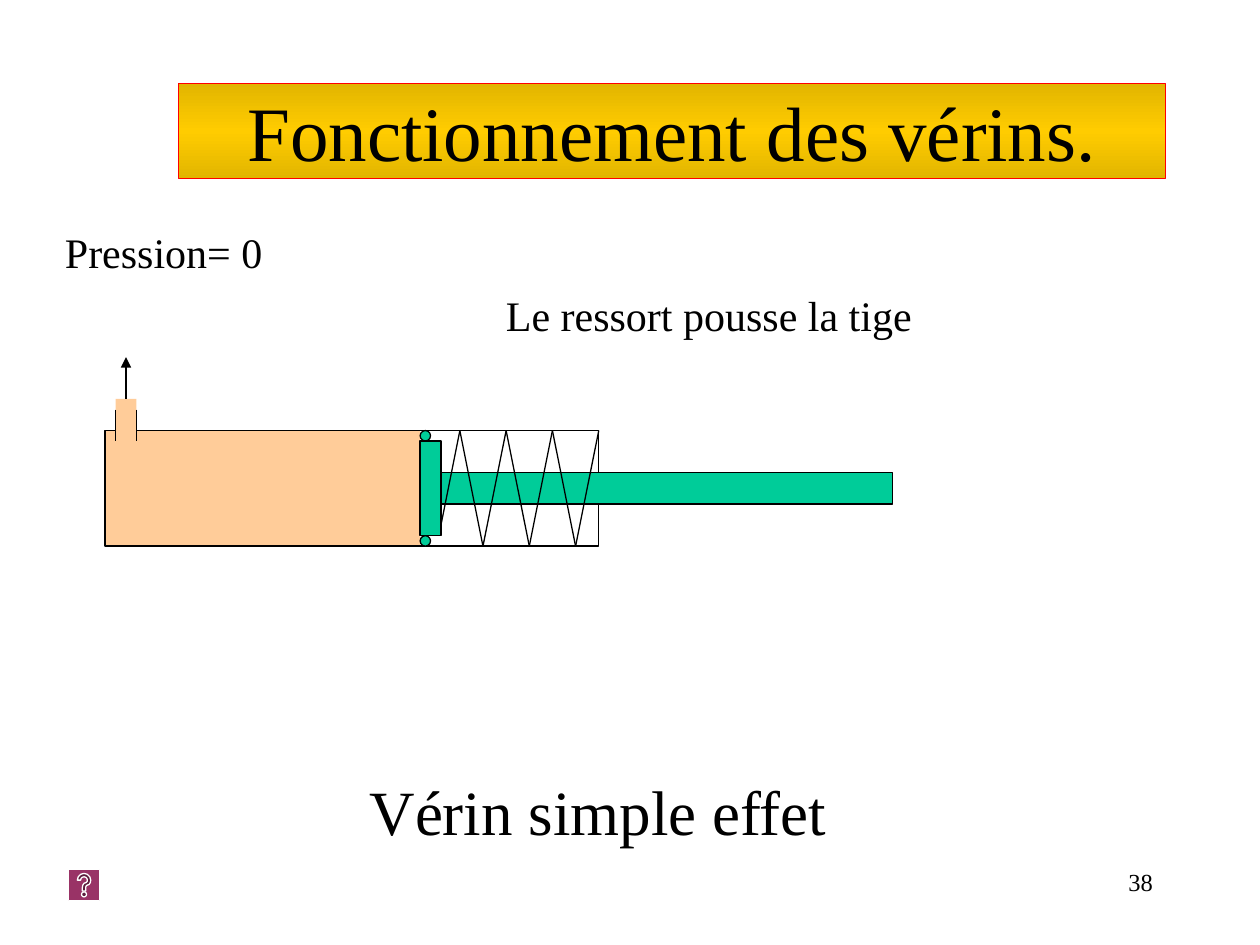
from copy import deepcopy
from dataclasses import dataclass
from itertools import pairwise

from lxml import etree
from pptx import Presentation
from pptx.dml.color import RGBColor
from pptx.enum.shapes import MSO_CONNECTOR, MSO_SHAPE
from pptx.enum.text import MSO_ANCHOR, PP_ALIGN
from pptx.oxml.ns import qn
from pptx.util import Cm, Pt

RECTANGLE = MSO_SHAPE.RECTANGLE
OVAL = MSO_SHAPE.OVAL
HELP_BUTTON = MSO_SHAPE.ACTION_BUTTON_HELP
STRAIGHT = MSO_CONNECTOR.STRAIGHT
LEFT, CENTER, RIGHT = PP_ALIGN.LEFT, PP_ALIGN.CENTER, PP_ALIGN.RIGHT
MIDDLE = MSO_ANCHOR.MIDDLE


@dataclass(frozen=True)
class Theme:
    font: str = "Times New Roman"
    black: str = "000000"
    white: str = "FFFFFF"
    red: str = "FF0000"
    gold: str = "FFCC00"
    dark_gold: str = "E2B500"
    chamber: str = "FFCC99"
    piston: str = "00CC99"
    button: str = "993366"
    title_size: int = 44
    caption_size: int = 36
    label_size: int = 24
    number_size: int = 14
    line_width: float = 0.75


THEME = Theme()


def color(value):
    return RGBColor.from_string(value)


def set_line(line, value):
    line.color.rgb = color(value)
    line.width = Pt(THEME.line_width)


def write(shape, text, size, alignment=LEFT):
    shape.text_frame.word_wrap = True
    paragraph = shape.text_frame.paragraphs[0]
    paragraph.text = text
    paragraph.alignment = alignment
    paragraph.font.name = THEME.font
    paragraph.font.size = Pt(size)
    paragraph.font.color.rgb = color(THEME.black)


def add_text(slide, box, text, size, alignment=LEFT):
    shape = slide.shapes.add_textbox(*map(Cm, box))
    write(shape, text, size, alignment)


def add_shape(shapes, kind, box, fill=None, line=None):
    shape = shapes.add_shape(kind, *map(Cm, box))
    shape.shadow.inherit = False
    if fill:
        shape.fill.solid()
        shape.fill.fore_color.rgb = color(fill)
    else:
        shape.fill.background()
    if line:
        set_line(shape.line, line)
    else:
        shape.line.fill.background()
    return shape


def add_line(shapes, start, end, value=THEME.black, arrow=False):
    connector = shapes.add_connector(STRAIGHT, *map(Cm, (*start, *end)))
    set_line(connector.line, value)
    properties = connector._element.spPr
    if arrow:
        outline = properties.find(qn("a:ln"))
        etree.SubElement(outline, qn("a:tailEnd"), type="triangle")
    etree.SubElement(properties, qn("a:effectLst"))


def add_title(slide, box, text):
    shape = add_shape(slide.shapes, RECTANGLE, box, line=THEME.red)
    shape.fill.gradient()
    shape.fill.gradient_angle = 270
    # A third stop makes the gradient run dark, bright, dark
    stops = shape._element.spPr.find(qn("a:gradFill")).find(qn("a:gsLst"))
    stops.insert(1, deepcopy(stops[0]))
    shades = (THEME.dark_gold, THEME.gold, THEME.dark_gold)
    for stop, shade, position in zip(shape.fill.gradient_stops, shades, (0, 0.5, 1)):
        stop.color.rgb = color(shade)
        stop.position = position
    shape.text_frame.vertical_anchor = MIDDLE
    write(shape, text, THEME.title_size, CENTER)


def add_cylinder(slide):
    shapes = slide.shapes.add_group_shape().shapes
    left, right, top, bottom = 2.12, 12.07, 8.68, 11.01
    piston_left, piston_right = 8.47, 8.89
    port_left, port_right = 2.33, 2.75
    body = (left, top, right - left, bottom - top)

    # Body, pressure chamber and port
    add_shape(shapes, RECTANGLE, body, THEME.white)
    add_shape(shapes, RECTANGLE, (left, top, piston_left - left, bottom - top), THEME.chamber)
    add_shape(shapes, RECTANGLE, (port_left, 8.04, port_right - port_left, 0.85), THEME.chamber)
    for x in (port_left, port_right):
        add_line(shapes, (x, 8.26), (x, 8.89))
    add_shape(shapes, RECTANGLE, body, line=THEME.black)
    add_line(shapes, (port_left, top), (port_right, top), THEME.chamber)

    # Rod, piston and seals
    add_shape(shapes, RECTANGLE, (piston_right, 9.53, 9.1, 0.63), THEME.piston, THEME.black)
    add_shape(shapes, RECTANGLE, (piston_left, 8.89, piston_right - piston_left, 1.91),
              THEME.piston, THEME.black)
    seal = 0.21
    for y in (top, bottom - seal):
        add_shape(shapes, OVAL, (piston_left, y, seal, seal), THEME.piston, THEME.black)

    # Spring: a zigzag between the walls, ending at the right end of the body
    first_peak, strokes = 9.27, 6
    step = (right - first_peak) / strokes
    spring = [(piston_right, 10.58)]
    spring += [(first_peak + i * step, bottom if i % 2 else top) for i in range(strokes + 1)]
    for start, end in pairwise(spring):
        add_line(shapes, start, end)

    # Exhaust arrow
    port_center = (port_left + port_right) / 2
    add_line(shapes, (port_center, 8.04), (port_center, 7.2), arrow=True)


def main():
    presentation = Presentation()
    presentation.slide_width, presentation.slide_height = Cm(25.4), Cm(19.05)
    slide = presentation.slides.add_slide(presentation.slide_layouts[6])

    # Heading and labels
    add_text(slide, (18.2, 17.36, 5.29, 1.27), "38", THEME.number_size, RIGHT)
    add_title(slide, (3.6, 1.69, 19.9, 1.91), "Fonctionnement des vérins.")
    add_text(slide, (9.95, 5.72, 9.74, 1.27), "Le ressort pousse la tige", THEME.label_size)
    add_text(slide, (1.06, 4.45, 5.29, 1.27), "Pression= 0", THEME.label_size)

    # Drawing, caption and help button
    add_cylinder(slide)
    add_text(slide, (7.2, 15.45, 11.64, 1.78), "Vérin simple effet", THEME.caption_size)
    add_shape(slide.shapes, HELP_BUTTON, (1.38, 17.53, 0.63, 0.63), THEME.button, THEME.white)

    presentation.save("out.pptx")


if __name__ == "__main__":
    main()
